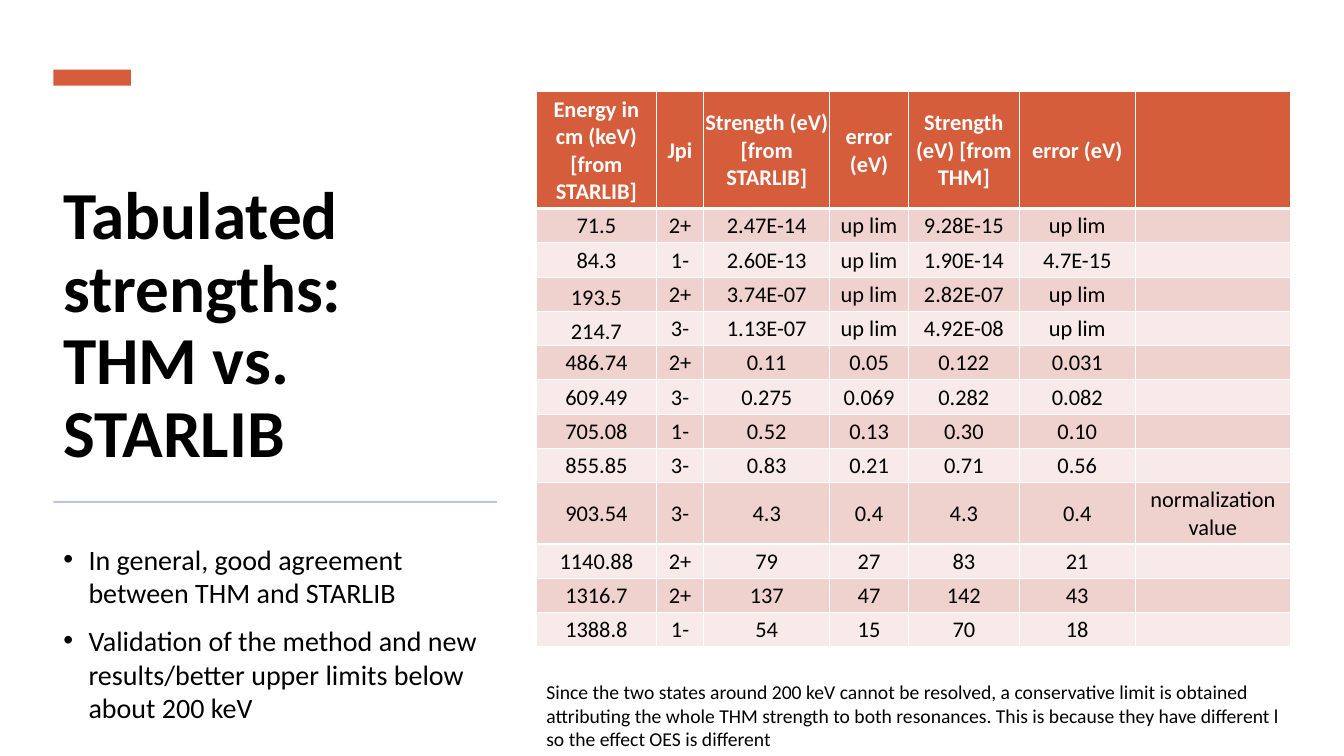
from lxml.etree import SubElement
from pptx import Presentation
from pptx.dml.color import RGBColor
from pptx.enum.shapes import MSO_SHAPE
from pptx.enum.text import MSO_ANCHOR, PP_ALIGN
from pptx.oxml.ns import qn
from pptx.util import Inches, Pt

BLACK = RGBColor(0x00, 0x00, 0x00)
WHITE = RGBColor(0xFF, 0xFF, 0xFF)
RUST = RGBColor(0xD5, 0x5D, 0x3B)
ROSE = RGBColor(0xEF, 0xD2, 0xCE)
BLUSH = RGBColor(0xF7, 0xEA, 0xE8)
STEEL = RGBColor(0xBA, 0xC5, 0xD8)
FONT = "Calibri"

TITLE = "Tabulated strengths: THM vs. STARLIB"
POINTS = [
    "In general, good agreement between THM and STARLIB",
    "Validation of the method and new results/better upper limits below about 200 keV",
]
NOTE = (
    "Since the two states around 200 keV cannot be resolved, a conservative limit "
    "is obtained attributing the whole THM strength to both resonances. This is "
    "because they have different l so the effect OES is different"
)
WIDTHS = [1.19, 0.47, 1.25, 0.78, 1.1, 1.15, 1.54]
HEAD = ["Energy in cm (keV) [from STARLIB]", "Jpi", "Strength (eV) [from STARLIB]",
        "error (eV)", "Strength (eV) [from THM]", "error (eV)", ""]
DATA = [
    ["71.5", "2+", "2.47E-14", "up lim", "9.28E-15", "up lim", ""],
    ["84.3", "1-", "2.60E-13", "up lim", "1.90E-14", "4.7E-15", ""],
    ["193.5", "2+", "3.74E-07", "up lim", "2.82E-07", "up lim", ""],
    ["214.7", "3-", "1.13E-07", "up lim", "4.92E-08", "up lim", ""],
    ["486.74", "2+", "0.11", "0.05", "0.122", "0.031", ""],
    ["609.49", "3-", "0.275", "0.069", "0.282", "0.082", ""],
    ["705.08", "1-", "0.52", "0.13", "0.30", "0.10", ""],
    ["855.85", "3-", "0.83", "0.21", "0.71", "0.56", ""],
    ["903.54", "3-", "4.3", "0.4", "4.3", "0.4", "normalization value"],
    ["1140.88", "2+", "79", "27", "83", "21", ""],
    ["1316.7", "2+", "137", "47", "142", "43", ""],
    ["1388.8", "1-", "54", "15", "70", "18", ""],
]
LOW = ("193.5", "214.7")  # energies set at the foot of their cells


def style(para, size, color=BLACK, bold=False):
    for run in para.runs:
        run.font.name = FONT
        run.font.size = Pt(size)
        run.font.bold = bold
        run.font.color.rgb = color


def add_bar(slide, left, top, width, height, color):
    bar = slide.shapes.add_shape(MSO_SHAPE.RECTANGLE, Inches(left), Inches(top),
                                 Inches(width), Inches(height))
    bar.shadow.inherit = False
    bar.fill.solid()
    bar.fill.fore_color.rgb = color
    bar.line.fill.background()


def add_text(slide, left, top, width, height, lines, size, bold=False):
    box = slide.shapes.add_textbox(Inches(left), Inches(top),
                                   Inches(width), Inches(height))
    frame = box.text_frame
    frame.word_wrap = True
    frame.text = "\n".join(lines)
    for para in frame.paragraphs:
        style(para, size, bold=bold)
    return frame


def add_side(slide, left, top, width):
    # Accent bar, title and rule
    add_bar(slide, left, top, 0.77, 0.16, RUST)
    title = add_text(slide, left, top + 0.54, width, 3.5, [TITLE], 48, True)
    title.vertical_anchor = MSO_ANCHOR.BOTTOM
    title.paragraphs[0].line_spacing = 0.9
    add_bar(slide, left, top + 4.28, width, 0.02, STEEL)

    # Bullet points
    body = add_text(slide, left, top + 4.64, width - 0.1, 1.95, POINTS, 20)
    for i, para in enumerate(body.paragraphs):
        props = para._p.get_or_add_pPr()
        props.set("marL", str(Inches(0.25)))
        props.set("indent", str(-Inches(0.25)))
        SubElement(props, qn("a:buFont")).set("typeface", "Arial")
        SubElement(props, qn("a:buChar")).set("char", "•")
        para.space_before = Pt(10 if i else 0)


def add_edge(cell, side, width):
    edge = SubElement(cell._tc.get_or_add_tcPr(), qn("a:ln" + side))
    edge.set("w", str(Pt(width)))
    fill = SubElement(edge, qn("a:solidFill"))
    SubElement(fill, qn("a:srgbClr")).set("val", str(WHITE))


def fill_cell(cell, text, row):
    cell.margin_left = cell.margin_right = cell.margin_top = Inches(0.01)
    cell.margin_bottom = 0
    cell.vertical_anchor = MSO_ANCHOR.BOTTOM if text in LOW else MSO_ANCHOR.MIDDLE
    thick = {(0, "B"), (1, "T")}
    for side in "LRTB":
        add_edge(cell, side, 3 if (row, side) in thick else 1)
    cell.fill.solid()
    cell.fill.fore_color.rgb = RUST if row == 0 else ROSE if row % 2 else BLUSH
    cell.text_frame.text = text
    para = cell.text_frame.paragraphs[0]
    para.alignment = PP_ALIGN.CENTER
    style(para, 16, BLACK if row else WHITE, row == 0)


def add_grid(slide, left, top, width, height):
    rows = [HEAD] + DATA
    grid = slide.shapes.add_table(len(rows), len(WIDTHS), Inches(left), Inches(top),
                                  Inches(width), Inches(height)).table
    for col, size in zip(grid.columns, WIDTHS):
        col.width = Inches(size)
    for r, texts in enumerate(rows):
        tall = 1.16 if r == 0 else 0.61 if texts[-1] else 0.34
        grid.rows[r].height = Inches(tall)
        for c, text in enumerate(texts):
            fill_cell(grid.cell(r, c), text, r)


def add_main(slide, left, top, width):
    # Table of strengths with the note below it
    add_grid(slide, left, top, width, 5.52)
    add_text(slide, left, top + 5.79, width, 0.81, [NOTE], 14)


def main():
    deck = Presentation()
    deck.slide_width = Inches(13.33)
    deck.slide_height = Inches(7.5)
    slide = deck.slides.add_slide(deck.slide_layouts[6])
    add_side(slide, 0.53, 0.69, 4.4)
    add_main(slide, 5.32, 0.91, 7.49)
    deck.save("out.pptx")


if __name__ == "__main__":
    main()
